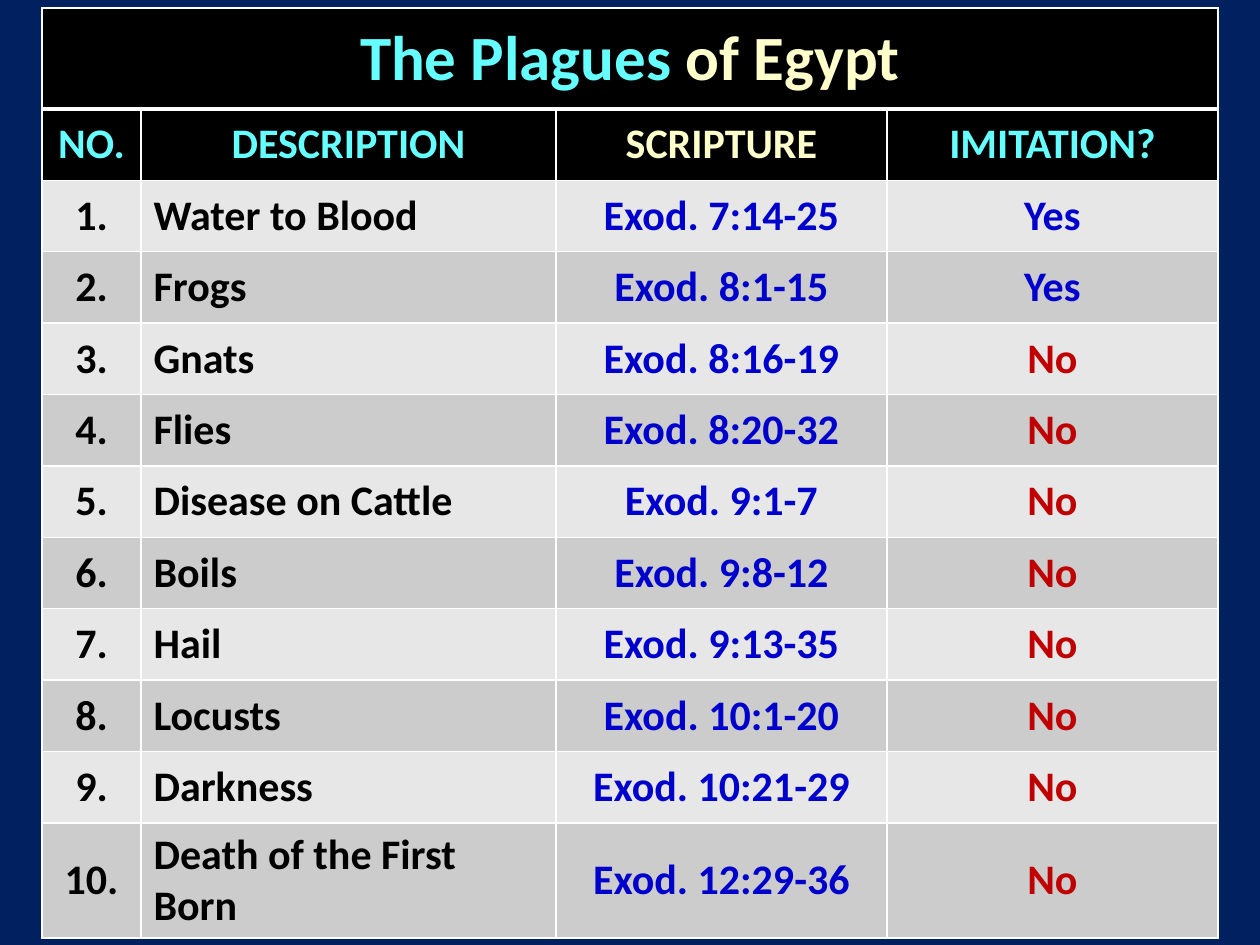
from typing import NamedTuple

from lxml.etree import SubElement
from pptx import Presentation
from pptx.dml.color import RGBColor
from pptx.enum.text import MSO_ANCHOR as Anchor, PP_ALIGN as Align
from pptx.oxml.ns import qn
from pptx.util import Pt

SCALE = 914400 / 126
NAVY, BLACK, WHITE = "002060", "000000", "FFFFFF"
AQUA, CREAM, BLUE, RED = "66FFFF", "FFFFCC", "0000CC", "C00000"
BANDS = ("E7E7E7", "CCCCCC")
COLS = (99, 415, 331, 331)
LEFT, TOP, HIGH = 42, 8, 929
TITLE, BODY = 101, 714


class Plague(NamedTuple):
    name: str
    verse: str
    copied: str = "No"


PLAGUES = (
    Plague("Water to Blood", "7:14-25", "Yes"),
    Plague("Frogs", "8:1-15", "Yes"),
    Plague("Gnats", "8:16-19"),
    Plague("Flies", "8:20-32"),
    Plague("Disease on Cattle", "9:1-7"),
    Plague("Boils", "9:8-12"),
    Plague("Hail", "9:13-35"),
    Plague("Locusts", "10:1-20"),
    Plague("Darkness", "10:21-29"),
    Plague("Death of the First Born", "12:29-36"),
)
HEADS = (("NO.", AQUA), ("DESCRIPTION", AQUA),
         ("SCRIPTURE", CREAM), ("IMITATION?", AQUA))


def px(n: int) -> int:
    return round(n * SCALE)


def rgb(code: str) -> RGBColor:
    return RGBColor.from_string(code)


def write(cell, text: str, *, color: str, size: int = 24,
          align: Align = Align.CENTER) -> None:
    para = cell.text_frame.paragraphs[0]
    para.alignment = align
    run = para.add_run()
    run.text = text
    font = run.font
    font.name, font.size, font.bold = "Calibri", Pt(size), True
    font.color.rgb = rgb(color)


def style(cell, fill: str, top: int = 1, base: int = 1) -> None:
    cell.vertical_anchor = Anchor.MIDDLE
    props = cell._tc.get_or_add_tcPr()
    for side, width in (("L", 1), ("R", 1), ("T", top), ("B", base)):
        line = SubElement(props, qn(f"a:ln{side}"), w=str(Pt(width)))
        SubElement(SubElement(line, qn("a:solidFill")),
                   qn("a:srgbClr"), val=WHITE)
    cell.fill.solid()
    cell.fill.fore_color.rgb = rgb(fill)


def fill_row(table, row: int, items, fill: str, top: int = 1) -> None:
    for col, (text, color) in enumerate(items):
        cell = table.cell(row, col)
        style(cell, fill, top=top)
        left = row > 1 and col == 1
        write(cell, text, color=color,
              align=Align.LEFT if left else Align.CENTER)


def main() -> None:
    deck = Presentation()
    deck.slide_width, deck.slide_height = px(1260), px(945)
    slide = deck.slides.add_slide(deck.slide_layouts[6])
    back = slide.background.fill
    back.solid()
    back.fore_color.rgb = rgb(NAVY)

    count = len(PLAGUES) + 2
    frame = slide.shapes.add_table(count, len(COLS), px(LEFT), px(TOP),
                                   px(sum(COLS)), px(HIGH))
    table = frame.table
    for col, width in zip(table.columns, COLS):
        col.width = px(width)
    for i, row in enumerate(table.rows):
        row.height = px(BODY) // 10 if i else px(TITLE)
    frame.height = px(HIGH)

    for col in range(len(COLS)):
        style(table.cell(0, col), BLACK, base=3)
    title = table.cell(0, 0)
    title.merge(table.cell(0, len(COLS) - 1))
    write(title, "The Plagues ", color=AQUA, size=36)
    write(title, "of Egypt", color=CREAM, size=36)

    fill_row(table, 1, HEADS, BLACK, top=3)
    for num, item in enumerate(PLAGUES, 1):
        hue = BLUE if item.copied == "Yes" else RED
        cells = ((f"{num}.", BLACK), (item.name, BLACK),
                 (f"Exod. {item.verse}", BLUE), (item.copied, hue))
        fill_row(table, num + 1, cells, BANDS[(num - 1) % 2])
    deck.save("out.pptx")


if __name__ == "__main__":
    main()
